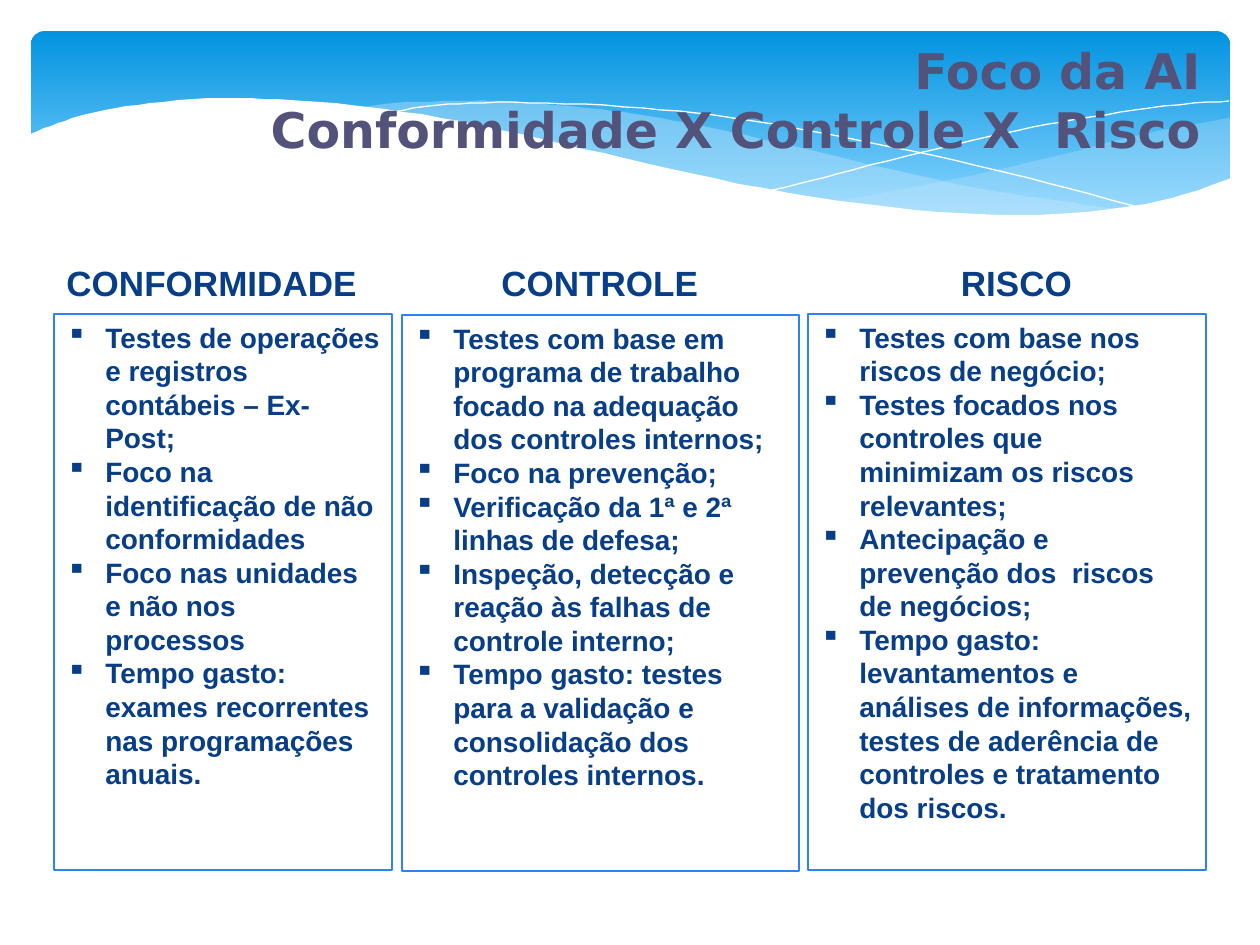
from lxml import etree
from pptx import Presentation
from pptx import util as u
from pptx.dml.color import RGBColor
from pptx.enum import shapes, text
from pptx.oxml.ns import qn

PX = 914400 // 126  # EMU per px
COLOURS = {"sky": "0293E0", "pale_sky": "83D3FE", "ribbon": "C6E7FC", "white": "FFFFFF",
           "title": "52527A", "navy": "073E87", "border": "2D83F4"}

# Content
TITLE = ["Foco da AI", "Conformidade X Controle X  Risco"]
TITLE_BOX = (253, 34, 960, 131)
HEADING_TOP, HEADING_HEIGHT, BOX_HEIGHT, BULLET_INDENT = 255, 55, 556, 39
COLUMNS = [
    {"heading": "CONFORMIDADE", "heading_x": (54, 324), "align": "LEFT", "wrap": True,
     "box": (54, 314, 338),
     "items": ["Testes de operações e registros contábeis – Ex-Post;",
               "Foco na identificação de não conformidades",
               "Foco nas unidades e não nos processos",
               "Tempo gasto: exames recorrentes nas programações anuais."]},
    {"heading": "CONTROLE", "heading_x": (489, 261), "align": "LEFT", "wrap": True,
     "box": (402, 315, 397),
     "items": ["Testes com base em programa de trabalho focado na adequação dos controles internos;",
               "Foco na prevenção;",
               "Verificação da 1ª e 2ª linhas de defesa;",
               "Inspeção, detecção e reação às falhas de controle interno;",
               "Tempo gasto: testes para a validação e consolidação dos controles internos."]},
    {"heading": "RISCO", "heading_x": (948, 137), "align": "CENTER", "wrap": False,
     "box": (808, 314, 398),
     "items": ["Testes com base nos riscos de negócio;",
               "Testes focados nos controles que minimizam os riscos relevantes;",
               "Antecipação e prevenção dos  riscos de negócios;",
               "Tempo gasto: levantamentos e análises de informações, testes de aderência de "
               "controles e tratamento dos riscos."]},
]

# Banner waves: each is a chain of curves, given by the points they pass through
BANNER = (31, 31, 1199, 197)
RIGHT_RIBBON = [
    [(1230, 118), (1178, 127), (1123, 139), (1048, 158), (949, 180), (833, 202)],
    [(833, 202), (888, 208), (954, 214), (1012, 217), (1076, 214), (1130, 208), (1178, 197),
     (1230, 178)]]
LONG_RIBBON = [
    [(1125, 210), (1055, 200), (977, 188), (890, 169), (793, 146), (717, 129), (648, 116),
     (586, 108), (503, 101), (455, 101), (394, 103), (360, 108)],
    [(360, 108), (431, 118), (509, 134), (619, 159), (713, 180), (799, 197), (876, 208),
     (942, 214), (1017, 218), (1080, 215), (1125, 210)]]
FALLING_LINE = [[(389, 113), (421, 107), (471, 103), (546, 103), (643, 108), (733, 118),
                 (838, 136), (958, 161), (1047, 183), (1143, 209)]]
RISING_LINE = [[(772, 190), (823, 178), (907, 156), (1016, 131), (1091, 117), (1164, 106),
                (1229, 101)]]
WHITE_WAVE = [
    [(1231, 178), (1172, 198), (1103, 210), (1019, 215), (915, 210), (789, 193), (667, 168),
     (563, 144), (460, 121), (368, 107), (290, 100), (223, 98), (150, 103), (96, 112),
     (58, 123), (29, 135)],
    [(29, 282), (1231, 282)]]
WAVES = [
    (RIGHT_RIBBON, {"fill": "ribbon", "opacity": 29}),
    (LONG_RIBBON, {"fill": "ribbon", "opacity": 40}),
    (FALLING_LINE, {"line": "white"}),
    (RISING_LINE, {"line": "white"}),
    (WHITE_WAVE, {"fill": "white"}),
]


def px(*lengths):
    return [length * PX for length in lengths]


def rgb(name):
    return RGBColor.from_string(COLOURS[name])


def smooth(points, steps=5):
    """Catmull-Rom curve through the points."""
    if len(points) < 3:
        return points
    padded = [points[0], *points, points[-1]]
    curve = [points[0]]
    for a, b, c, d in zip(padded, padded[1:], padded[2:], padded[3:]):
        for step in range(1, steps + 1):
            t = step / steps
            curve.append(tuple(
                (2 * q + (r - p) * t + (2 * p - 5 * q + 4 * r - s) * t ** 2
                 + (3 * q - p - 3 * r + s) * t ** 3) / 2
                for p, q, r, s in zip(a, b, c, d)))
    return curve


def add_wave(slide, curves, fill=None, line=None, opacity=100):
    points = [point for curve in curves for point in smooth(curve)]
    builder = slide.shapes.build_freeform(*points[0], scale=PX)
    builder.add_line_segments(points[1:], close=fill is not None)
    shape = builder.convert_to_shape()
    shape.shadow.inherit = False
    if fill:
        shape.fill.solid()
        shape.fill.fore_color.rgb = rgb(fill)
        shape.line.fill.background()
        if opacity < 100:
            colour = shape.element.spPr.find(".//" + qn("a:srgbClr"))
            etree.SubElement(colour, qn("a:alpha"), val=str(opacity * 1000))
    else:
        shape.fill.background()
        shape.line.color.rgb = rgb(line)
        shape.line.width = u.Pt(0)


def write(shape, lines, size, colour, font="Arial", align="LEFT", wrap=True, bullet=None):
    frame = shape.text_frame
    frame.word_wrap = wrap
    frame.auto_size = text.MSO_AUTO_SIZE.NONE
    frame.vertical_anchor = text.MSO_ANCHOR.TOP
    for index, line in enumerate(lines):
        paragraph = frame.paragraphs[0] if index == 0 else frame.add_paragraph()
        paragraph.alignment = getattr(text.PP_ALIGN, align)
        run = paragraph.add_run()
        run.text = line
        run.font.name, run.font.size, run.font.bold = font, u.Pt(size), True
        run.font.color.rgb = rgb(colour)
        if bullet:
            properties = paragraph._p.get_or_add_pPr()
            properties.set("marL", str(BULLET_INDENT * PX))
            properties.set("indent", str(-BULLET_INDENT * PX))
            etree.SubElement(properties, qn("a:buChar"), char=bullet)


def add_banner(slide):
    banner = slide.shapes.add_shape(shapes.MSO_SHAPE.ROUNDED_RECTANGLE, *px(*BANNER))
    banner.adjustments[0] = 0.07
    banner.shadow.inherit = False
    banner.line.fill.background()
    banner.fill.gradient()
    banner.fill.gradient_angle = 270
    stops = zip(banner.fill.gradient_stops, ("sky", "pale_sky"), (0, 0.9))
    for stop, colour, position in stops:
        stop.color.rgb, stop.position = rgb(colour), position
    for curves, style in WAVES:
        add_wave(slide, curves, **style)


def add_column(slide, column):
    left, top, width = column["box"]
    box = slide.shapes.add_shape(shapes.MSO_SHAPE.RECTANGLE, *px(left, top, width, BOX_HEIGHT))
    box.shadow.inherit = False
    box.fill.background()
    box.line.color.rgb = rgb("border")
    box.line.width = u.Pt(0.75)
    write(box, column["items"], 16, "navy", bullet="▪")

    left, width = column["heading_x"]
    heading = slide.shapes.add_textbox(*px(left, HEADING_TOP, width, HEADING_HEIGHT))
    write(heading, [column["heading"]], 20, "navy", align=column["align"], wrap=column["wrap"])


def main():
    presentation = Presentation()
    presentation.slide_width, presentation.slide_height = px(1260, 945)
    slide = presentation.slides.add_slide(presentation.slide_layouts[5])

    add_banner(slide)

    # Title, brought in front of the banner
    title = slide.shapes.title
    title.left, title.top, title.width, title.height = px(*TITLE_BOX)
    write(title, TITLE, 28, "title", font="DejaVu Sans", align="RIGHT")
    title.element.getparent().append(title.element)

    for column in COLUMNS:
        add_column(slide, column)
    presentation.save("out.pptx")


if __name__ == "__main__":
    main()
